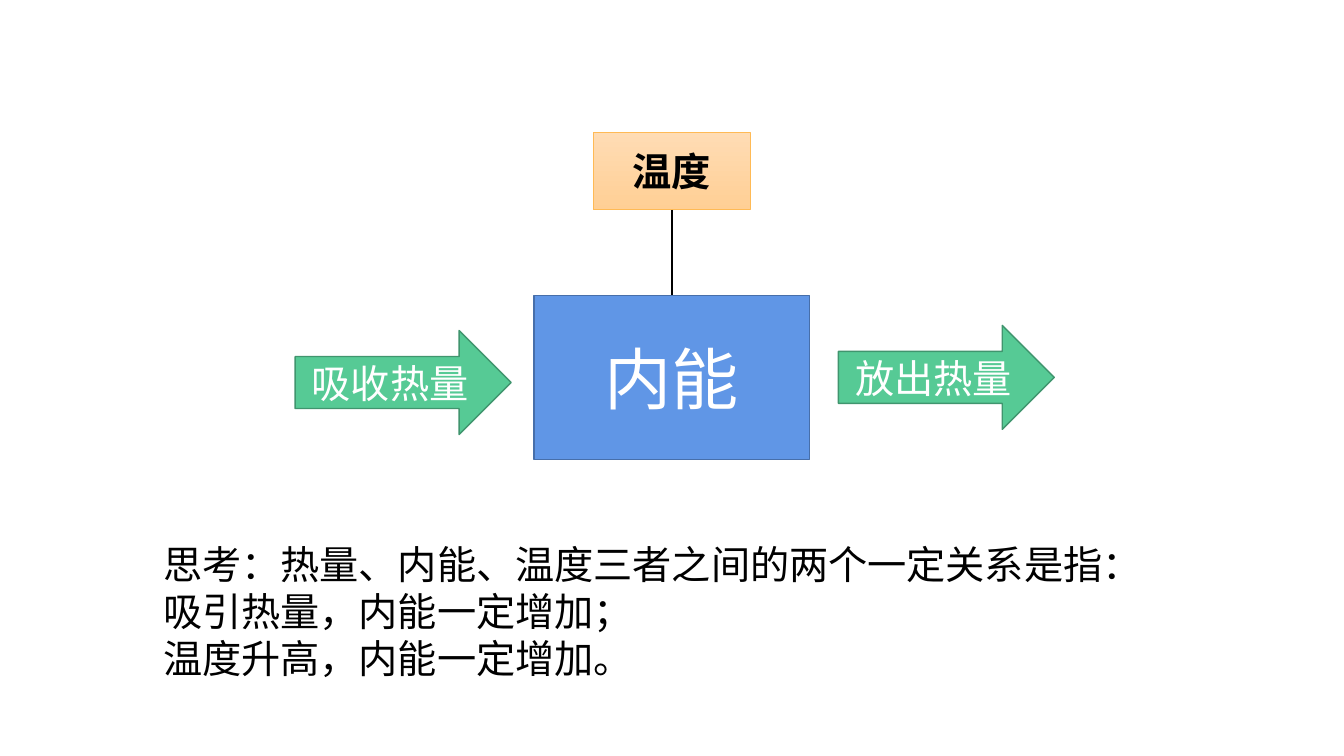
from dataclasses import dataclass

import pptx
import pptx.dml.color
import pptx.enum.shapes
import pptx.enum.text
import pptx.oxml
import pptx.oxml.ns
import pptx.shapes.autoshape
import pptx.slide
import pptx.text.text
import pptx.util

Cm = pptx.util.Cm
Pt = pptx.util.Pt
SHAPE = pptx.enum.shapes.MSO_SHAPE
ALIGN = pptx.enum.text.PP_ALIGN
CJK_FONT = "Noto Sans CJK SC"


@dataclass
class Box:
    """A labelled shape, measured in centimetres; two fills make a vertical gradient."""
    text: str
    kind: SHAPE
    left: float
    top: float
    width: float
    height: float
    fills: tuple[str, ...]
    line: str
    line_width: float = 1
    size: int = 28
    color: str = "FFFFFF"
    bold: bool = False


def rgb(value: str) -> pptx.dml.color.RGBColor:
    return pptx.dml.color.RGBColor.from_string(value)


def write(tf: pptx.text.text.TextFrame, text: str, *, size: int = 28, color: str = "000000",
          font: str = CJK_FONT, bold: bool = False, align: ALIGN = ALIGN.LEFT) -> None:
    """Fill the frame with one paragraph for each line of text."""
    for i, line in enumerate(text.split("\n")):
        p = tf.paragraphs[0] if i == 0 else tf.add_paragraph()
        p.alignment = align
        r = p.add_run()
        r.text = line
        r.font.size = Pt(size)
        r.font.bold = bold
        r.font.name = font
        r.font.color.rgb = rgb(color)
        ea = pptx.oxml.parse_xml(f'<a:ea {pptx.oxml.ns.nsdecls("a")} typeface="{CJK_FONT}"/>')
        r.font._element.find(pptx.oxml.ns.qn("a:latin")).addnext(ea)


def add_box(s: pptx.slide.Slide, box: Box) -> pptx.shapes.autoshape.Shape:
    sp = s.shapes.add_shape(box.kind, Cm(box.left), Cm(box.top), Cm(box.width), Cm(box.height))
    sp.shadow.inherit = False
    if len(box.fills) == 1:
        sp.fill.solid()
        sp.fill.fore_color.rgb = rgb(box.fills[0])
    else:
        sp.fill.gradient()
        sp.fill.gradient_angle = 270
        for stop, color in zip(sp.fill.gradient_stops, box.fills):
            stop.color.rgb = rgb(color)
    sp.line.color.rgb = rgb(box.line)
    sp.line.width = Pt(box.line_width)
    tf = sp.text_frame
    tf.vertical_anchor = pptx.enum.text.MSO_ANCHOR.MIDDLE
    write(tf, box.text, size=box.size, color=box.color, font="Arial", bold=box.bold,
          align=ALIGN.CENTER)
    return sp


def join_vertically(s: pptx.slide.Slide, upper: pptx.shapes.autoshape.Shape,
                    lower: pptx.shapes.autoshape.Shape) -> None:
    cxn = s.shapes.add_connector(pptx.enum.shapes.MSO_CONNECTOR.STRAIGHT, 0, 0, 0, 0)
    cxn.begin_connect(upper, 2)
    cxn.end_connect(lower, 0)
    cxn.line.color.rgb = rgb("000000")
    cxn.line.width = Pt(1.5)
    cxn._element.spPr.append(pptx.oxml.parse_xml(f'<a:effectLst {pptx.oxml.ns.nsdecls("a")}/>'))


ENERGY = Box("内能", SHAPE.RECTANGLE, 13.46, 7.44, 6.94, 4.14, ("6096E6",), "476FAA", size=48)
HEAT_FLOWS = [
    Box(text, SHAPE.RIGHT_ARROW, left, top, 5.44, 2.62, ("56CA95",), "40956E")
    for text, left, top in [("吸收热量", 7.44, 8.33), ("放出热量", 21.13, 8.2)]
]
TEMPERATURE = Box("温度", SHAPE.RECTANGLE, 14.95, 3.33, 3.96, 1.96, ("FFDCB4", "FFCF95"),
                  "FFBA55", line_width=0.5, color="000000", bold=True)
QUESTION = """思考：热量、内能、温度三者之间的两个一定关系是指：
吸引热量，内能一定增加；
温度升高，内能一定增加。"""


def main() -> None:
    prs = pptx.Presentation()
    prs.slide_width, prs.slide_height = Cm(33.87), Cm(19.05)
    s = prs.slides.add_slide(prs.slide_layouts[6])

    energy = add_box(s, ENERGY)
    for flow in HEAT_FLOWS:
        add_box(s, flow)
    temperature = add_box(s, TEMPERATURE)
    join_vertically(s, temperature, energy)

    tf = s.shapes.add_textbox(Cm(3.86), Cm(13.49), Cm(25.2), Cm(3.84)).text_frame
    tf.word_wrap = False
    tf.auto_size = pptx.enum.text.MSO_AUTO_SIZE.SHAPE_TO_FIT_TEXT
    write(tf, QUESTION)

    prs.save("out.pptx")


if __name__ == "__main__":
    main()
